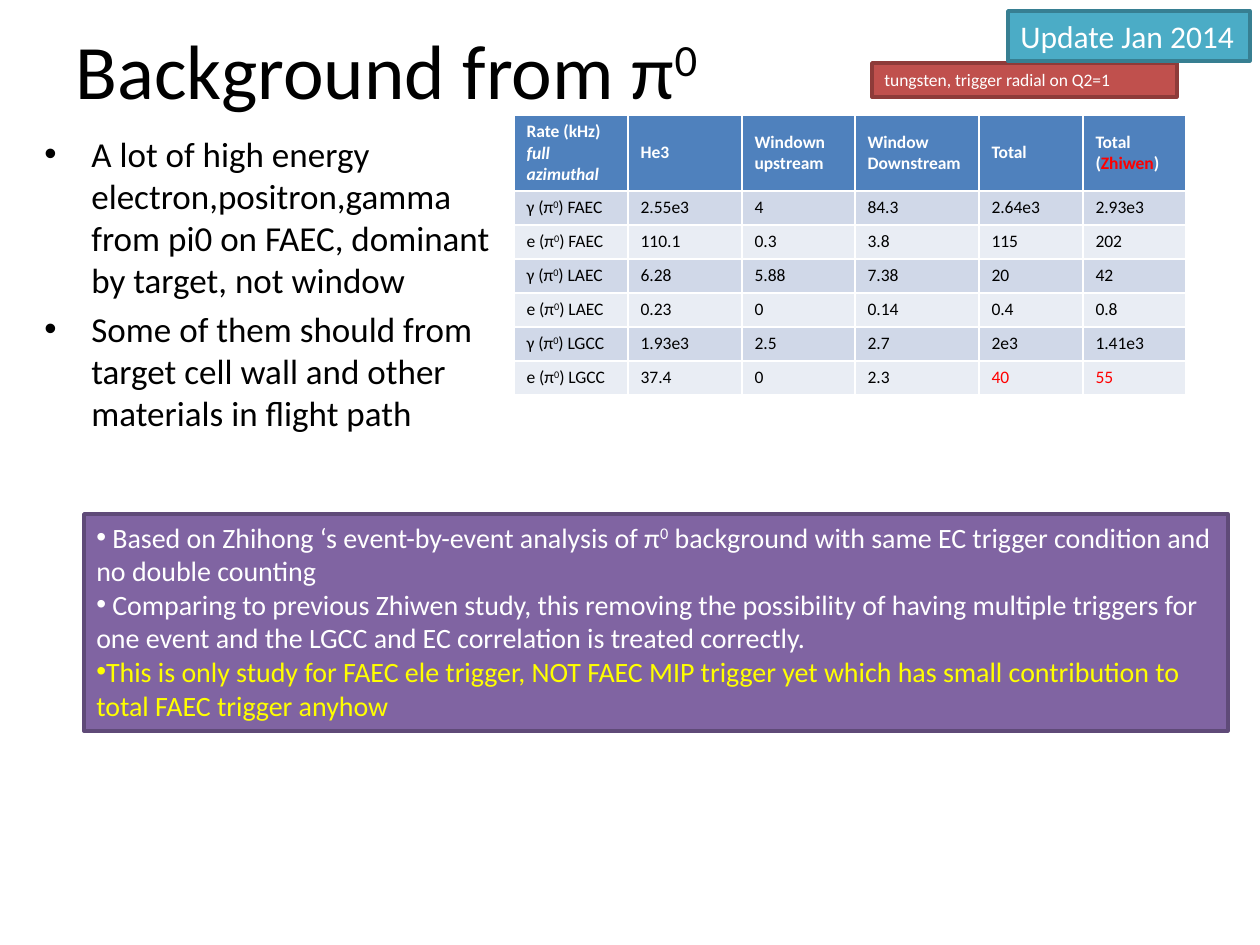
from lxml import etree
from pptx import Presentation
from pptx.dml.color import RGBColor
from pptx.enum.shapes import MSO_SHAPE
from pptx.enum.text import MSO_ANCHOR, PP_ALIGN
from pptx.oxml.ns import qn
from pptx.util import Emu, Pt

RECTANGLE = MSO_SHAPE.RECTANGLE
LEFT = PP_ALIGN.LEFT
MIDDLE, TOP = MSO_ANCHOR.MIDDLE, MSO_ANCHOR.TOP
EMU_PER_PX = 914400 / 126
FONT = "Calibri"

COLORS = {
    "black": "000000", "white": "FFFFFF", "red": "FF0000", "yellow": "FFFF00",
    "header": "4F81BD", "band_dark": "D0D8E8", "band_light": "E9EDF4",
    "tungsten": "C0504D", "tungsten_line": "8E3B39",
    "notes": "8064A2", "notes_line": "5F4A78",
    "update": "4BACC6", "update_line": "377F92",
}

SUP_0 = ("0", {"sup": True})
TITLE = [["Background from π", SUP_0]]
FINDINGS = [
    ["A lot of high energy electron,positron,gamma from pi0 on FAEC, "
     "dominant by target, not window"],
    ["Some of them should from target cell wall and other materials in flight path"],
]
HEADER = [
    [["Rate (kHz)"], [("full azimuthal", {"italic": True})]],
    [["He3"]],
    [["Windown"], ["upstream"]],
    [["Window"], ["Downstream"]],
    [["Total"]],
    [["Total"], ["(", ("Zhiwen", {"color": "red"}), ")"]],
]
RATES = [
    ("γ", "FAEC", "2.55e3", "4", "84.3", "2.64e3", "2.93e3"),
    ("e", "FAEC", "110.1", "0.3", "3.8", "115", "202"),
    ("γ", "LAEC", "6.28", "5.88", "7.38", "20", "42"),
    ("e", "LAEC", "0.23", "0", "0.14", "0.4", "0.8"),
    ("γ", "LGCC", "1.93e3", "2.5", "2.7", "2e3", "1.41e3"),
    ("e", "LGCC", "37.4", "0", "2.3",
     ("40", {"color": "red"}), ("55", {"color": "red"})),
]
COLUMN_WIDTHS = [114, 114, 113, 124, 104, 103]
HEADER_HEIGHT, RATE_HEIGHT = 76, 34
NOTES = [
    [" Based on Zhihong ‘s event-by-event analysis of π", SUP_0,
     " background with same EC trigger condition and no double counting"],
    [" Comparing to previous Zhiwen study, this removing the possibility of having "
     "multiple triggers for one event and the LGCC and EC correlation is treated correctly."],
    [("This is only study for FAEC ele trigger, NOT FAEC MIP trigger yet which has "
      "small contribution to total FAEC trigger anyhow", {"color": "yellow"})],
]
BOXES = [
    ("tungsten", (872, 63, 305, 34), 10, [["tungsten, trigger radial on Q2=1"]], False, True),
    ("notes", (84, 514, 1144, 217), 16, NOTES, True, True),
    ("update", (1008, 11, 242, 50), 18, [["Update Jan 2014"]], False, False),
]


def px(length):
    return Emu(round(length * EMU_PER_PX))


def rgb(name):
    return RGBColor.from_string(COLORS[name])


def add_bullet(paragraph, indent):
    properties = paragraph._p.get_or_add_pPr()
    properties.set("marL", str(px(indent)))
    properties.set("indent", str(-px(indent)))
    etree.SubElement(properties, qn("a:buFont")).set("typeface", "Arial")
    etree.SubElement(properties, qn("a:buChar")).set("char", "•")


def write(frame, paragraphs, size, color, bold=False, bullet=None, before=0):
    for index, pieces in enumerate(paragraphs):
        paragraph = frame.paragraphs[0] if index == 0 else frame.add_paragraph()
        paragraph.alignment = LEFT
        paragraph.space_before = Pt(before)
        if bullet is not None:
            add_bullet(paragraph, bullet)
        for piece in pieces:
            text, style = (piece, {}) if isinstance(piece, str) else piece
            run = paragraph.add_run()
            run.text = text
            run.font.name = FONT
            run.font.size = Pt(size)
            run.font.bold = bold
            run.font.italic = style.get("italic", False)
            run.font.color.rgb = rgb(style.get("color", color))
            if style.get("sup"):
                run._r.get_or_add_rPr().set("baseline", "30000")


def add_text(slide, place, anchor, *content, **layout):
    frame = slide.shapes.add_textbox(*map(px, place)).text_frame
    frame.word_wrap = True
    frame.vertical_anchor = anchor
    write(frame, *content, **layout)


def add_box(slide, name, place, size, paragraphs, bulleted, wrap):
    box = slide.shapes.add_shape(RECTANGLE, *map(px, place))
    box.shadow.inherit = False
    box.fill.solid()
    box.fill.fore_color.rgb = rgb(name)
    box.line.color.rgb = rgb(name + "_line")
    box.line.width = Pt(2)
    box.text_frame.word_wrap = wrap
    box.text_frame.vertical_anchor = TOP
    write(box.text_frame, paragraphs, size, "white", bullet=0 if bulleted else None)


def add_rates(slide):
    rows = [HEADER] + [
        [[[f"{particle} (π", SUP_0, f") {detector}"]]] + [[[value]] for value in values]
        for particle, detector, *values in RATES
    ]
    heights = [HEADER_HEIGHT] + [RATE_HEIGHT] * len(RATES)
    place = (514, 115, sum(COLUMN_WIDTHS), sum(heights))
    table = slide.shapes.add_table(len(rows), len(HEADER), *map(px, place)).table
    for column, width in zip(table.columns, COLUMN_WIDTHS):
        column.width = px(width)
    for index, (row, height) in enumerate(zip(rows, heights)):
        is_header = index == 0
        fill = "header" if is_header else "band_dark" if index % 2 else "band_light"
        table.rows[index].height = px(height)
        for cell, paragraphs in zip(table.rows[index].cells, row):
            cell.fill.solid()
            cell.fill.fore_color.rgb = rgb(fill)
            cell.vertical_anchor = MIDDLE if is_header else TOP
            write(cell.text_frame, paragraphs, 10,
                  "white" if is_header else "black", bold=is_header)


def main():
    deck = Presentation()
    deck.slide_width, deck.slide_height = px(1260), px(945)
    slide = deck.slides.add_slide(deck.slide_layouts[6])
    add_text(slide, (63, -10, 1134, 157), MIDDLE, TITLE, 44, "black")
    add_text(slide, (32, 126, 472, 347), TOP, FINDINGS, 20, "black", bullet=47, before=4)
    add_rates(slide)
    for box in BOXES:
        add_box(slide, *box)
    deck.save("out.pptx")


if __name__ == "__main__":
    main()
